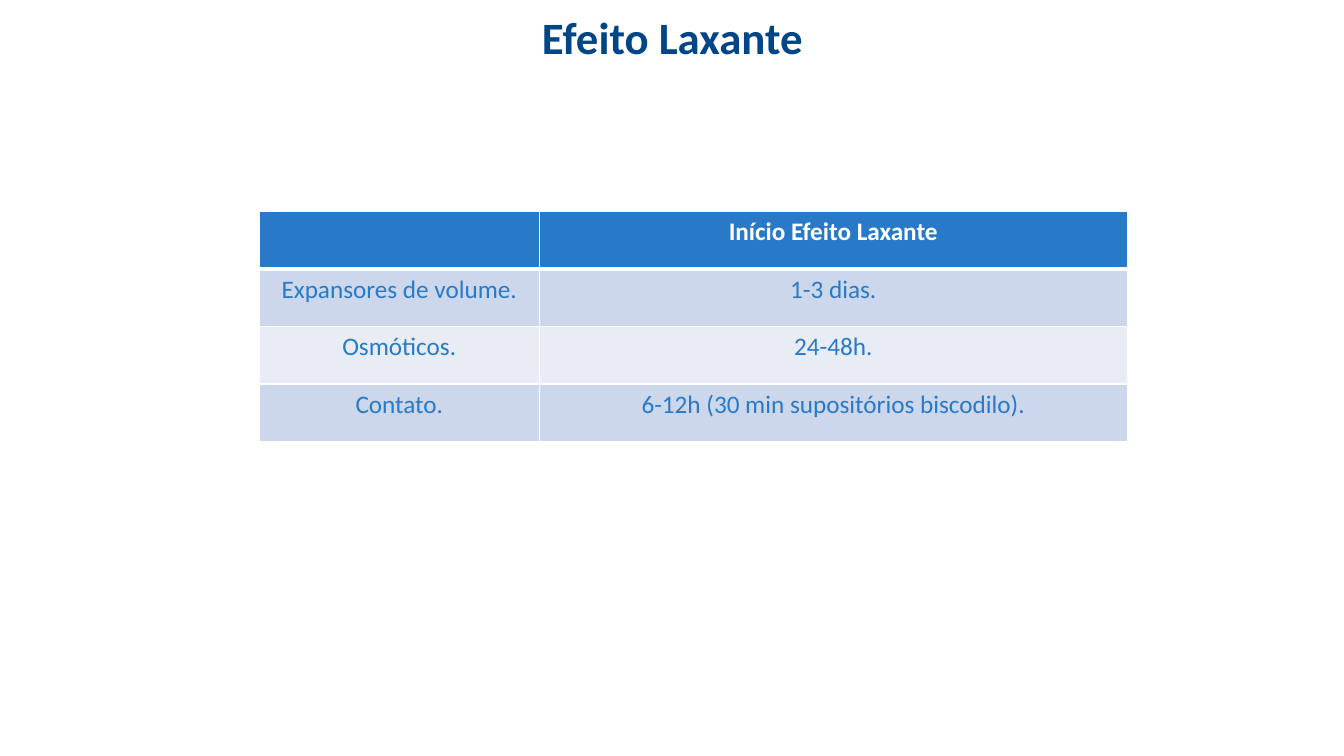
from lxml.etree import SubElement
from pptx import Presentation
from pptx.dml.color import RGBColor
from pptx.enum.text import MSO_ANCHOR as Anchor, PP_ALIGN as Align
from pptx.oxml.ns import qn
from pptx.util import Pt

EMU_PER_PX = 9144
NAVY, BLUE, WHITE = "004586", "287AC8", "FFFFFF"
BANDS = ("CDD7EB", "E8ECF5")


def px(length):
    return length * EMU_PER_PX


def color(hex_code):
    return RGBColor.from_string(hex_code)


class SlideBuilder:
    """Holds the deck style and the current slide."""

    font_name = "Calibri"

    def __init__(self, width, height):
        self.deck = Presentation()
        self.deck.slide_width, self.deck.slide_height = px(width), px(height)
        self.slide = self.deck.slides.add_slide(self.deck.slide_layouts[6])

    def set_text(self, frame, text, size, hex_code, bold):
        paragraph = frame.paragraphs[0]
        paragraph.text = text
        paragraph.alignment = Align.CENTER
        font = paragraph.font
        font.name, font.size, font.bold = self.font_name, Pt(size), bold
        font.color.rgb = color(hex_code)

    def title(self, text, left, top, width, height):
        frame = self.slide.shapes.add_textbox(
            px(left), px(top), px(width), px(height)).text_frame
        frame.word_wrap = True
        frame.vertical_anchor = Anchor.MIDDLE
        self.set_text(frame, text, 32, NAVY, True)

    def borders(self, cell, top, bottom):
        properties = cell._tc.get_or_add_tcPr()
        for side, points in (("L", 1), ("R", 1), ("T", top), ("B", bottom)):
            line = SubElement(properties, qn(f"a:ln{side}"), w=str(Pt(points)))
            fill = SubElement(line, qn("a:solidFill"))
            SubElement(fill, qn("a:srgbClr"), val=WHITE)

    def table(self, rows, left, top, widths, row_height):
        grid = self.slide.shapes.add_table(
            len(rows), len(widths), px(left), px(top),
            px(sum(widths)), px(row_height * len(rows))).table
        for column, width in zip(grid.columns, widths):
            column.width = px(width)
        for r, texts in enumerate(rows):
            header = r == 0
            for c, text in enumerate(texts):
                cell = grid.cell(r, c)
                self.borders(cell, 3 if r == 1 else 1, 3 if header else 1)
                cell.fill.solid()
                cell.fill.fore_color.rgb = color(BLUE if header else BANDS[(r - 1) % 2])
                self.set_text(cell.text_frame, text, 18, WHITE if header else BLUE, header)


def main():
    builder = SlideBuilder(1333, 750)
    builder.title("Efeito Laxante", 67, 3, 1200, 66)
    onset_by_laxative = [
        ("", "Início Efeito Laxante"),
        ("Expansores de volume.", "1-3 dias."),
        ("Osmóticos.", "24-48h."),
        ("Contato.", "6-12h (30 min supositórios biscodilo)."),
    ]
    builder.table(onset_by_laxative, 257, 210, (278, 583), 57)
    builder.deck.save("out.pptx")


if __name__ == "__main__":
    main()
